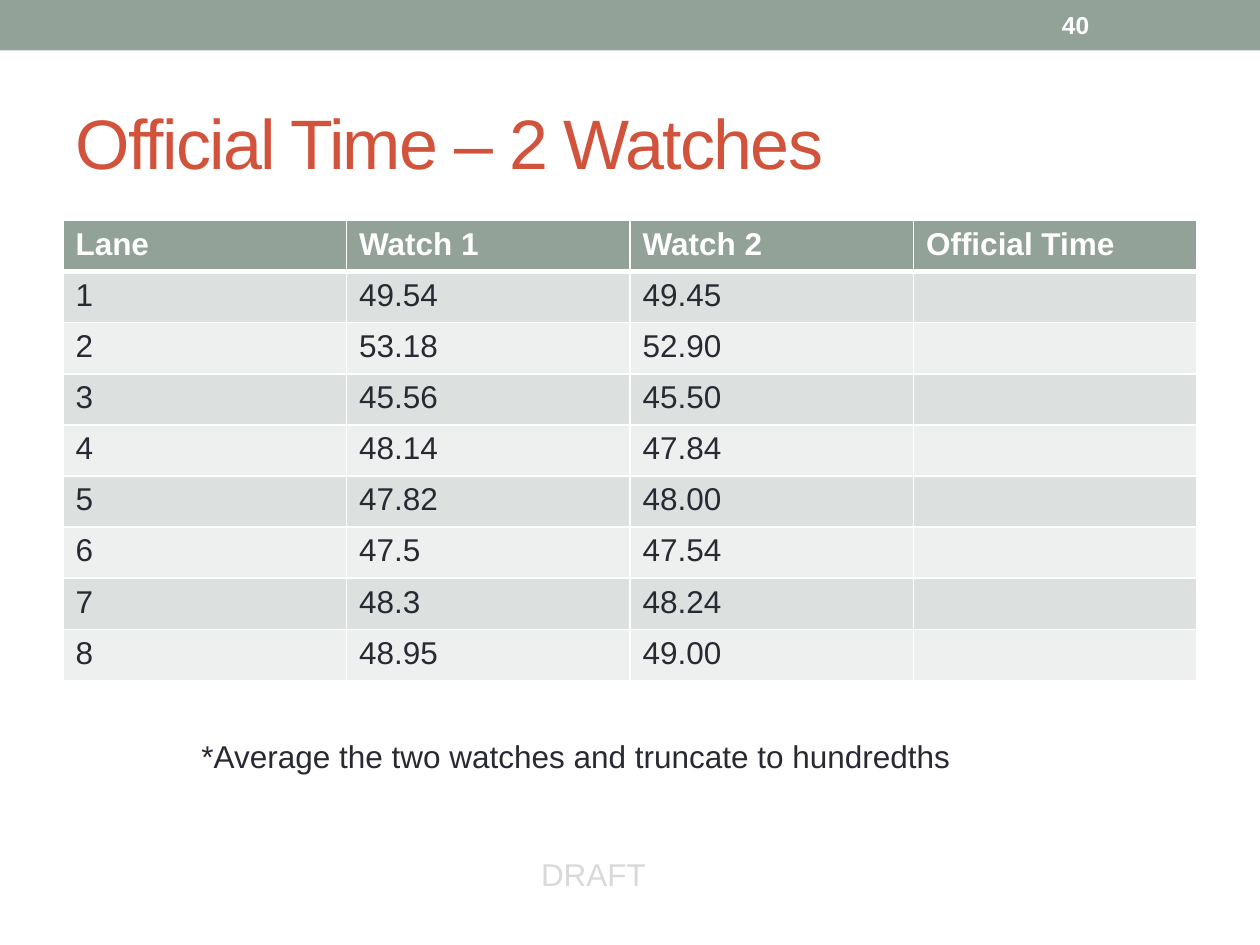
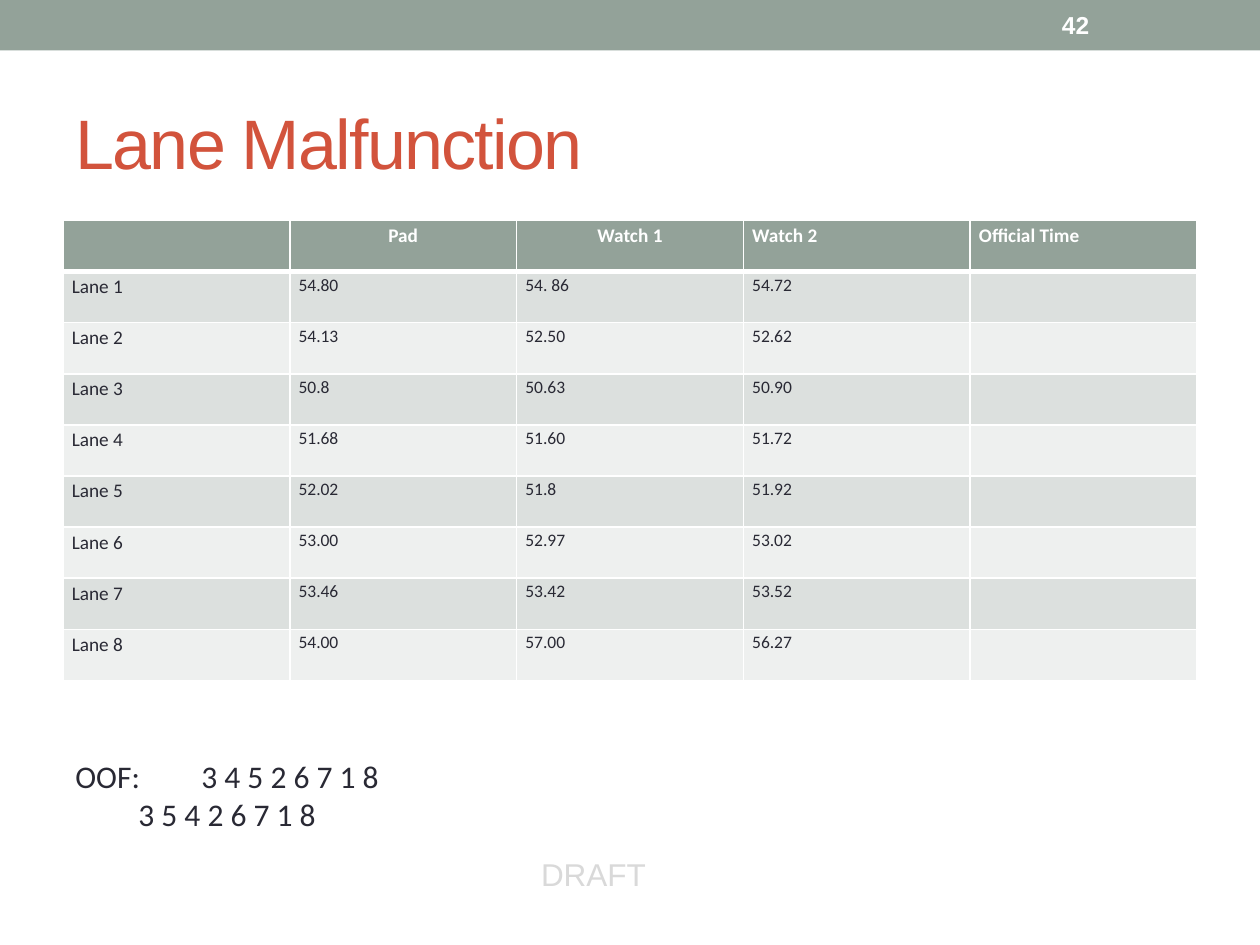
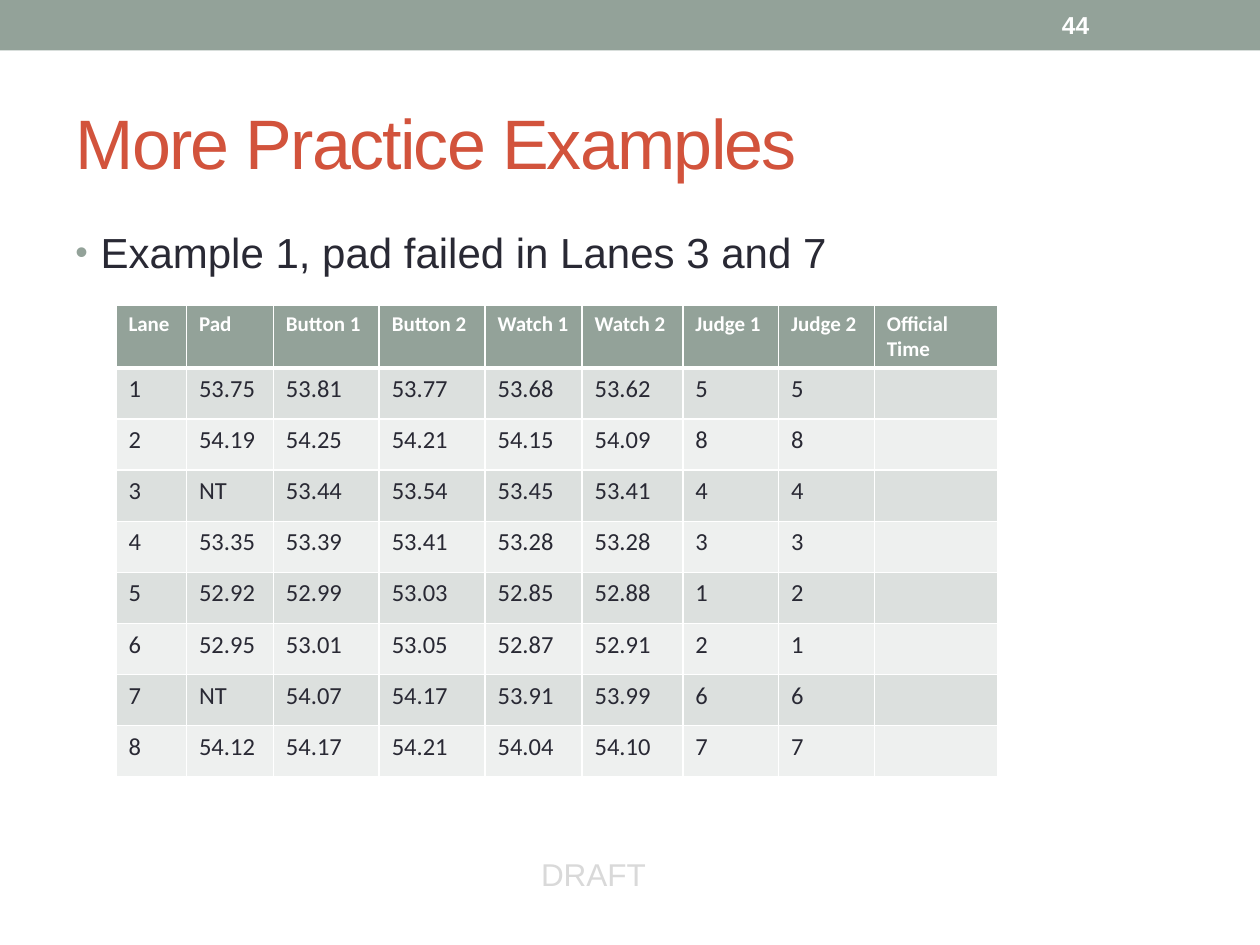
import pptx
import pptx.dml.color
import pptx.enum.shapes
import pptx.enum.text
import pptx.oxml.ns
import pptx.util
from lxml import etree

Inches = pptx.util.Inches
Pt = pptx.util.Pt
ALIGN = pptx.enum.text.PP_ALIGN
ANCHOR = pptx.enum.text.MSO_ANCHOR
qn = pptx.oxml.ns.qn

SAGE, RUST, INK, WHITE = "93A299", "D2533C", "292934", "FFFFFF"
PALE_GREY, STRIPES = "D9D9D9", ("DCE0DE", "EEF0EF")
BAND_BOX = (0, 0, 10, 0.4)
TITLE_BOX = (0.5, 0.58, 9, 1.08)
DRAFT_BOX = (1.75, 6.74, 5.92, 0.4)
MAIN_BOX = (0.5, 1.75, 9, 3.65)


def rgb(code):
    return pptx.dml.color.RGBColor.from_string(code)


def inches(box):
    return [Inches(length) for length in box]


def apply(target, values):
    for name, value in values.items():
        setattr(target, name, value)


def write(paragraph, text, size, color, face="Arial", bold=False, **layout):
    run = paragraph.add_run()
    run.text = text
    apply(run.font, {"name": face, "size": Pt(size), "bold": bold})
    run.font.color.rgb = rgb(color)
    apply(paragraph, layout)
    return run


def add_text(slide, box, lines, size, color, face="Arial", bold=False, frame_format=None, **layout):
    frame = slide.shapes.add_textbox(*inches(box)).text_frame
    apply(frame, {"word_wrap": True, **(frame_format or {})})
    for index, line in enumerate(lines):
        paragraph = frame.add_paragraph() if index else frame.paragraphs[0]
        write(paragraph, line, size, color, face, bold, **layout)
    return frame


def add_band(slide, box, number):
    left, top, width, height = box
    band = slide.shapes.add_shape(pptx.enum.shapes.MSO_SHAPE.RECTANGLE, *inches(box))
    band.shadow.inherit = False
    band.fill.solid()
    band.fill.fore_color.rgb = rgb(SAGE)
    band.line.fill.background()
    add_text(slide, (left + width - 1.67, top + 0.02, 1.17, height - 0.04), [number], 14, WHITE,
             bold=True, frame_format={"vertical_anchor": ANCHOR.MIDDLE})


def add_title(slide, box, text):
    title = slide.shapes.title
    apply(title, dict(zip(("left", "top", "width", "height"), inches(box))))
    apply(title.text_frame, {"vertical_anchor": ANCHOR.MIDDLE, "word_wrap": True,
                             "auto_size": pptx.enum.text.MSO_AUTO_SIZE.NONE})
    heading = write(title.text_frame.paragraphs[0], text, 40, RUST, alignment=ALIGN.LEFT)
    heading._r.get_or_add_rPr().set("spc", "-100")


def start_slide(deck, title, number):
    slide = deck.slides.add_slide(deck.slide_layouts[5])
    add_band(slide, BAND_BOX, number)
    add_text(slide, DRAFT_BOX, ["DRAFT"], 18, PALE_GREY, alignment=ALIGN.CENTER)
    add_title(slide, TITLE_BOX, title)
    return slide


def set_borders(cell, top, bottom):
    properties = cell._tc.get_or_add_tcPr()
    for side, points in (("lnL", 1), ("lnR", 1), ("lnT", top), ("lnB", bottom)):
        line = etree.SubElement(properties, qn(f"a:{side}"), w=str(Pt(points)))
        fill = etree.SubElement(line, qn("a:solidFill"))
        etree.SubElement(fill, qn("a:srgbClr"), val=WHITE)


def add_times(slide, box, headings, rows, face, sizes, widths=None, centred=(),
              insets=None, **layout):
    header_size, lane_size, time_size = sizes
    grid = [headings] + [row + [""] for row in rows]
    table = slide.shapes.add_table(len(grid), len(headings), *inches(box)).table
    apply(table, {"first_row": False, "horz_banding": False})
    for column, width in zip(table.columns, widths or ()):
        column.width = Inches(width)
    for r, row in enumerate(grid):
        for c, text in enumerate(row):
            cell = table.cell(r, c)
            set_borders(cell, 3 if r == 1 else 1, 3 if r == 0 else 1)
            cell.fill.solid()
            cell.fill.fore_color.rgb = rgb(STRIPES[(r - 1) % 2] if r else SAGE)
            if not text:
                continue
            apply(cell, insets or {})
            size = header_size if r == 0 else time_size if c else lane_size
            alignment = ALIGN.CENTER if r == 0 and text in centred else ALIGN.LEFT
            write(cell.text_frame.paragraphs[0], text, size, INK if r else WHITE, face, r == 0,
                  alignment=alignment, **layout)


def number_lanes(times, prefix=""):
    return [[f"{prefix}{lane}", *row] for lane, row in enumerate(times, 1)]


def build_two_watches(deck):
    slide = start_slide(deck, "Official Time – 2 Watches", "40")
    times = [("49.54", "49.45"), ("53.18", "52.90"), ("45.56", "45.50"), ("48.14", "47.84"),
             ("47.82", "48.00"), ("47.5", "47.54"), ("48.3", "48.24"), ("48.95", "49.00")]
    add_times(slide, MAIN_BOX, ["Lane", "Watch 1", "Watch 2", "Official Time"],
              number_lanes(times), "Arial", (18, 18, 18))
    add_text(slide, (1.5, 5.8, 7.25, 0.4),
             ["*Average the two watches and truncate to hundredths"], 18, INK)


def build_lane_malfunction(deck):
    slide = start_slide(deck, "Lane Malfunction", "42")
    times = [("54.80", "54. 86", "54.72"), ("54.13", "52.50", "52.62"),
             ("50.8", "50.63", "50.90"), ("51.68", "51.60", "51.72"),
             ("52.02", "51.8", "51.92"), ("53.00", "52.97", "53.02"),
             ("53.46", "53.42", "53.52"), ("54.00", "57.00", "56.27")]
    insets = {"margin_left": Inches(0.07), "margin_right": Inches(0.07),
              "margin_top": 0, "margin_bottom": 0}
    add_times(slide, MAIN_BOX, ["", "Pad", "Watch 1", "Watch 2", "Official Time"],
              number_lanes(times, "Lane "), "Calibri", (11, 11, 10),
              centred=("Pad", "Watch 1"), insets=insets, line_spacing=1.15)
    add_text(slide, (0.5, 5.67, 6.42, 1.31), ["OOF:\t3 4 5 2 6 7 1 8", "\t3 5 4 2 6 7 1 8"],
             18, INK, "Calibri", frame_format={"margin_top": Inches(0.34)})


def add_bullet(paragraph):
    properties = paragraph._p.get_or_add_pPr()
    properties.set("marL", str(Inches(0.2)))
    properties.set("indent", str(-Inches(0.2)))
    color = etree.SubElement(properties, qn("a:buClr"))
    etree.SubElement(color, qn("a:srgbClr"), val=SAGE)
    etree.SubElement(properties, qn("a:buSzPct"), val="85000")
    etree.SubElement(properties, qn("a:buFont"), typeface="Arial")
    etree.SubElement(properties, qn("a:buChar"), char="•")


def build_practice(deck):
    slide = start_slide(deck, "More Practice Examples", "44")
    example = add_text(slide, (0.5, 1.75, 9, 5.33), ["Example 1, pad failed in Lanes 3 and 7"],
                       24, INK, space_before=Pt(5))
    add_bullet(example.paragraphs[0])
    times = [("53.75", "53.81", "53.77", "53.68", "53.62", "5", "5"),
             ("54.19", "54.25", "54.21", "54.15", "54.09", "8", "8"),
             ("NT", "53.44", "53.54", "53.45", "53.41", "4", "4"),
             ("53.35", "53.39", "53.41", "53.28", "53.28", "3", "3"),
             ("52.92", "52.99", "53.03", "52.85", "52.88", "1", "2"),
             ("52.95", "53.01", "53.05", "52.87", "52.91", "2", "1"),
             ("NT", "54.07", "54.17", "53.91", "53.99", "6", "6"),
             ("54.12", "54.17", "54.21", "54.04", "54.10", "7", "7")]
    headings = ["Lane", "Pad", "Button 1", "Button 2", "Watch 1", "Watch 2",
                "Judge 1", "Judge 2", "Official Time"]
    add_times(slide, (0.92, 2.42, 6.99, 3.65), headings, number_lanes(times), "Calibri",
              (12, 14, 14), widths=(0.56, 0.69, 0.84, 0.84, 0.77, 0.8, 0.76, 0.76, 0.98))


def main():
    deck = pptx.Presentation()
    apply(deck, {"slide_width": Inches(10), "slide_height": Inches(7.5)})
    for build in (build_two_watches, build_lane_malfunction, build_practice):
        build(deck)
    deck.save("out.pptx")


if __name__ == "__main__":
    main()
